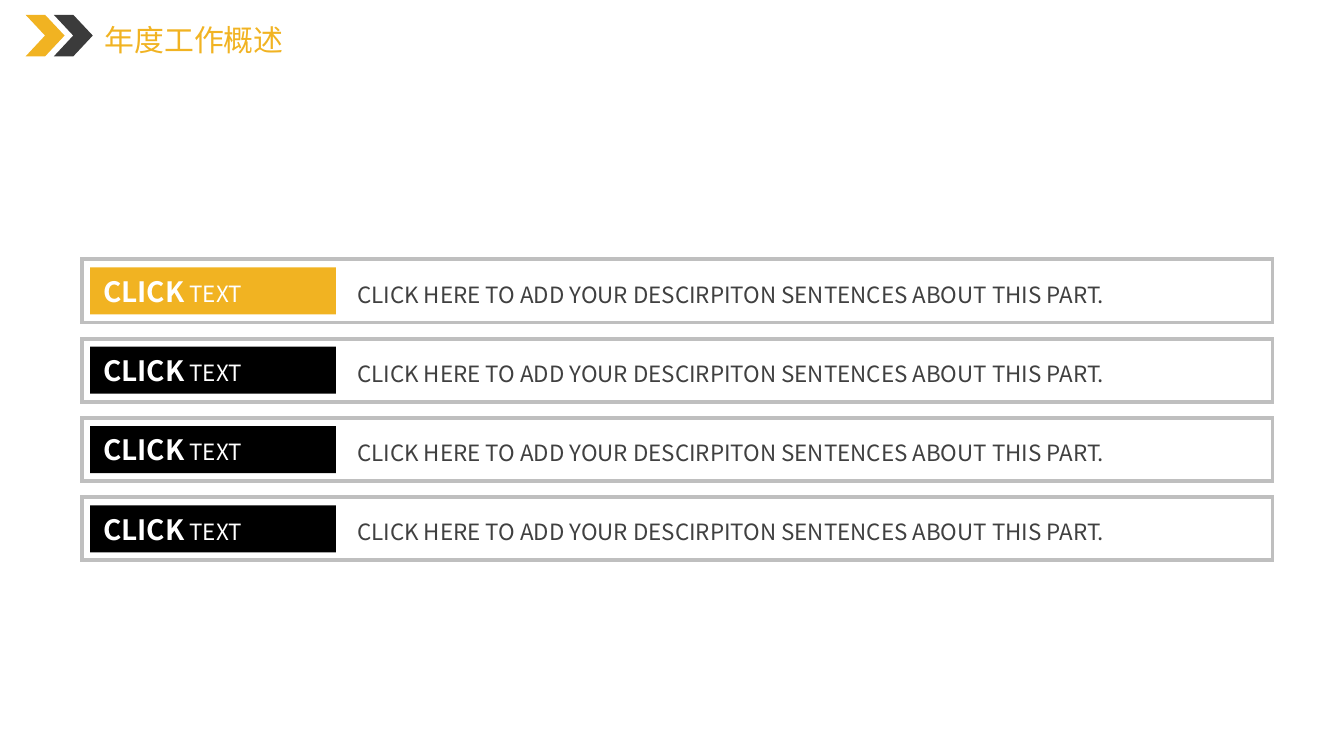
from dataclasses import dataclass

from lxml.etree import SubElement
from pptx import Presentation
from pptx.dml.color import RGBColor
from pptx.enum.shapes import MSO_SHAPE
from pptx.enum.text import MSO_ANCHOR, PP_ALIGN
from pptx.oxml.ns import qn
from pptx.util import Inches, Pt

COLORS = {
    "accent": "F1B322",
    "dark": "3B3B3B",
    "black": "000000",
    "white": "FFFFFF",
    "frame": "BFBFBF",
    "body": "404040",
}
FONT = "Noto Sans CJK SC"
SLIDE_W = 10
SLIDE_H = SLIDE_W * 9 / 16

# Row grid, in inches
ROW_LEFT, ROW_TOP, ROW_PITCH = 0.61, 1.93, 0.59
ROW_W, ROW_H = 8.86, 0.47
TAG_DX, TAG_DY, TAG_W, TAG_H = 0.06, 0.06, 1.83, 0.35
TEXT_DX, TEXT_DY, TEXT_H = 1.95, 0.11, 0.3


@dataclass
class Row:
    tag: str
    tag_rest: str
    description: str
    color: str = "black"


DESCRIPTION = "CLICK HERE TO ADD YOUR DESCIRPITON SENTENCES ABOUT THIS PART."
ROWS = [Row("CLICK", " TEXT", DESCRIPTION, "accent")]
ROWS += [Row("CLICK", " TEXT", DESCRIPTION) for _ in range(3)]


def rgb(name: str) -> RGBColor:
    return RGBColor.from_string(COLORS[name])


def add_box(shapes, kind, left: float, top: float, width: float, height: float,
            fill: str = "", line: str = ""):
    """Add a preset shape with an optional fill and a square-cornered outline."""
    s = shapes.add_shape(kind, Inches(left), Inches(top), Inches(width), Inches(height))
    s.shadow.inherit = False
    if fill:
        s.fill.solid()
        s.fill.fore_color.rgb = rgb(fill)
    else:
        s.fill.background()
    if line:
        s.line.color.rgb = rgb(line)
        s.line.width = Pt(2)
        SubElement(s.element.spPr.find(qn("a:ln")), qn("a:miter"), lim="800000")
    else:
        s.line.fill.background()
    return s


def add_run(p, text: str, size: float, color: str, bold: bool = False) -> None:
    r = p.add_run()
    r.text = text
    r.font.size = Pt(size)
    r.font.bold = bold
    r.font.color.rgb = rgb(color)
    r.font.name = FONT
    SubElement(r.font._element, qn("a:ea"), typeface=FONT)


def add_text(shapes, left: float, top: float, width: float, height: float,
             text: str, size: float, color: str, wrap: bool = True):
    tb = shapes.add_textbox(Inches(left), Inches(top), Inches(width), Inches(height))
    tf = tb.text_frame
    tf.word_wrap = wrap
    add_run(tf.paragraphs[0], text, size, color)
    return tf


def add_header(shapes) -> None:
    tf = add_text(shapes, 0.7, 0.12, 1.5, 0.35, "年度工作概述", 16, "accent", wrap=False)
    tf.margin_left = tf.margin_right = Inches(0.08)
    tf.margin_top = tf.margin_bottom = Inches(0.04)
    for i, color in enumerate(("accent", "dark")):
        add_box(shapes, MSO_SHAPE.CHEVRON, 0.19 + 0.21 * i, 0.11, 0.29, 0.31, fill=color)


def add_row(shapes, index: int, row: Row) -> None:
    """Group a frame, its description and its coloured tag."""
    group = shapes.add_group_shape().shapes
    top = ROW_TOP + index * ROW_PITCH
    add_box(group, MSO_SHAPE.RECTANGLE, ROW_LEFT, top, ROW_W, ROW_H, line="frame")
    add_text(group, ROW_LEFT + TEXT_DX, top + TEXT_DY, ROW_W - TEXT_DX, TEXT_H,
             row.description, 12, "body")
    tag = add_box(group, MSO_SHAPE.RECTANGLE, ROW_LEFT + TAG_DX, top + TAG_DY,
                  TAG_W, TAG_H, fill=row.color)
    tf = tag.text_frame
    tf.word_wrap = True
    tf.vertical_anchor = MSO_ANCHOR.MIDDLE
    p = tf.paragraphs[0]
    p.alignment = PP_ALIGN.LEFT
    add_run(p, row.tag, 15, "white", bold=True)
    add_run(p, row.tag_rest, 12, "white")


def main() -> None:
    prs = Presentation()
    prs.slide_width, prs.slide_height = Inches(SLIDE_W), Inches(SLIDE_H)
    slide = prs.slides.add_slide(prs.slide_layouts[6])

    # Title with its two chevrons
    add_header(slide.shapes)

    # Four evenly spaced rows
    for i, row in enumerate(ROWS):
        add_row(slide.shapes, i, row)

    prs.save("out.pptx")


if __name__ == "__main__":
    main()
